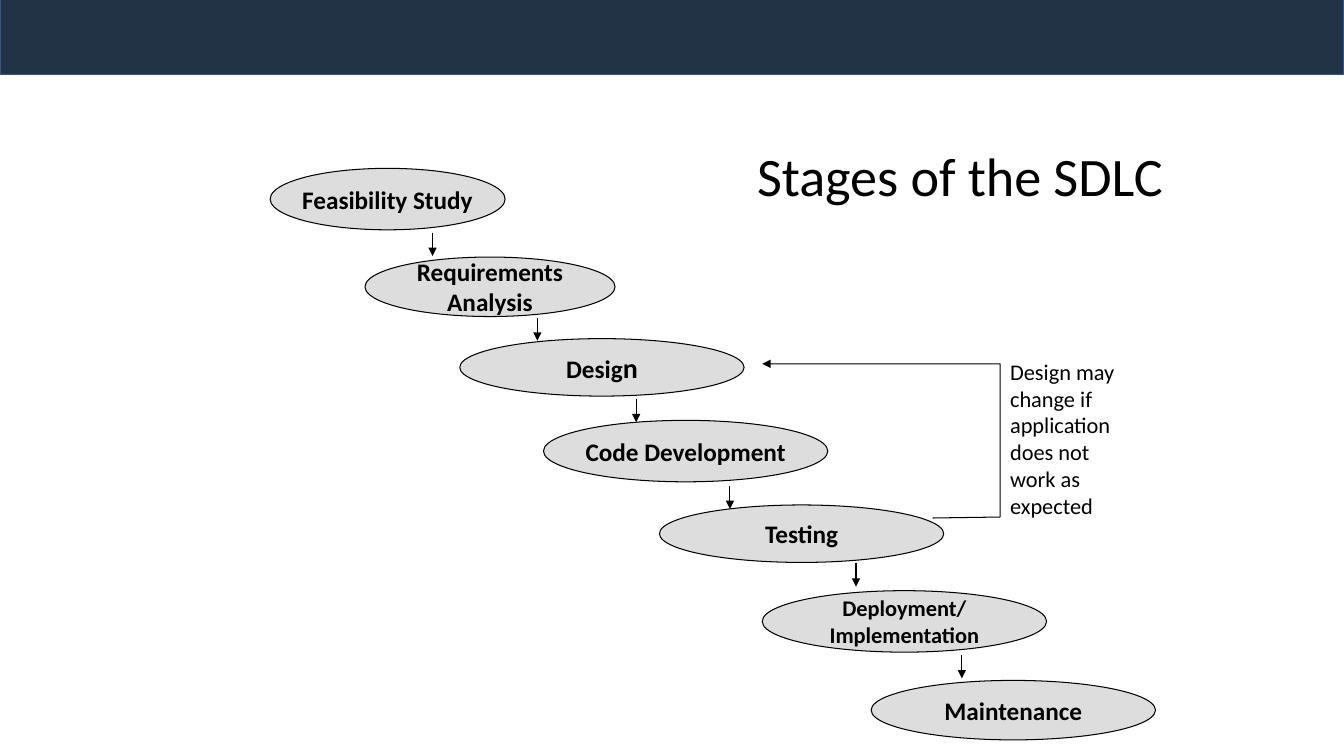
"""Build the slide that shows the stages of the SDLC as a staircase."""
from lxml.etree import SubElement
from pptx import Presentation
from pptx.dml.color import RGBColor
from pptx.enum.shapes import MSO_CONNECTOR, MSO_SHAPE
from pptx.enum.text import MSO_ANCHOR, PP_ALIGN
from pptx.oxml.ns import qn
from pptx.util import Inches, Pt

COLORS = {"banner": "223346", "banner_edge": "325491", "stage": "DDDDDD",
          "ink": "000000"}
FONT = "Calibri"
ARROW_LENGTH = 0.23

STAGES = [
    (2.68, 1.67, 2.33, 0.61, [[("Feasibility Study", 18)]], (4.29, 2.31)),
    (3.62, 2.55, 2.48, 0.59, [[("Requirements", 18)], [("Analysis", 18)]],
     (5.33, 3.15)),
    (4.56, 3.36, 2.82, 0.57, [[("Desig", 18), ("n", 20)]], (6.31, 3.96)),
    (5.39, 4.17, 2.82, 0.61, [[("Code Development", 18)]], (7.24, 4.82)),
    (6.54, 5.01, 2.82, 0.57, [[("Testing", 18)]], (8.49, 5.59)),
    (7.56, 5.86, 2.82, 0.61, [[("Deployment/", 16)], [("Implementation", 16)]],
     (9.54, 6.5)),
    (8.64, 6.75, 2.82, 0.59, [[("Maintenance", 18)]], None),
]


def color(name):
    """Return the named colour."""
    return RGBColor.from_string(COLORS[name])


def write(holder, paragraphs, bold=False, align=PP_ALIGN.LEFT,
          anchor=MSO_ANCHOR.TOP, wrap=True, spacing=None):
    """Fill a shape with paragraphs of (text, size) runs."""
    frame = holder.text_frame
    frame.word_wrap = wrap
    frame.vertical_anchor = anchor
    for index, runs in enumerate(paragraphs):
        paragraph = frame.add_paragraph() if index else frame.paragraphs[0]
        paragraph.alignment = align
        paragraph.line_spacing = spacing
        for text, size in runs:
            run = paragraph.add_run()
            run.text = text
            run.font.name = FONT
            run.font.size = Pt(size)
            run.font.bold = bold
            run.font.color.rgb = color("ink")


def outline(part, name="ink", width=0.75):
    """Give a shape or connector a solid line."""
    part.line.color.rgb = color(name)
    part.line.width = Pt(width)


def point_at_end(part):
    """Put a triangular arrowhead at the end of a line."""
    SubElement(part.line._get_or_add_ln(), qn("a:tailEnd"), type="triangle")


def add_filled(slide, kind, left, top, width, height, fill):
    """Add a flat preset shape with a solid fill."""
    part = slide.shapes.add_shape(kind, Inches(left), Inches(top),
                                  Inches(width), Inches(height))
    part.shadow.inherit = False
    part.fill.solid()
    part.fill.fore_color.rgb = color(fill)
    return part


def add_banner(slide):
    """Add the dark band along the top edge."""
    banner = add_filled(slide, MSO_SHAPE.RECTANGLE, 0, -0.04, 13.33, 0.78,
                        "banner")
    outline(banner, "banner_edge", 1)


def add_label(slide, left, top, width, height, text, size, **style):
    """Add a text box with one paragraph."""
    label = slide.shapes.add_textbox(Inches(left), Inches(top),
                                     Inches(width), Inches(height))
    write(label, [[(text, size)]], **style)


def add_stage(slide, left, top, width, height, paragraphs):
    """Add one stage ellipse."""
    stage = add_filled(slide, MSO_SHAPE.OVAL, left, top, width, height, "stage")
    outline(stage)
    write(stage, paragraphs, bold=True, align=PP_ALIGN.CENTER,
          anchor=MSO_ANCHOR.MIDDLE, wrap=False)


def add_down_arrow(slide, x, y):
    """Add the short arrow that leads to the next stage."""
    arrow = slide.shapes.add_connector(
        MSO_CONNECTOR.STRAIGHT, Inches(x), Inches(y),
        Inches(x), Inches(y + ARROW_LENGTH))
    outline(arrow)
    point_at_end(arrow)
    SubElement(arrow._element.spPr, qn("a:effectLst"))


def add_feedback(slide, *corners):
    """Add the angled arrow that leads from testing back to design."""
    start, *bends = [(Inches(x), Inches(y)) for x, y in corners]
    builder = slide.shapes.build_freeform(*start)
    builder.add_line_segments(bends, close=False)
    feedback = builder.convert_to_shape()
    feedback.shadow.inherit = False
    feedback.fill.background()
    outline(feedback)
    point_at_end(feedback)


def main():
    """Build and save the slide."""
    deck = Presentation()
    deck.slide_width, deck.slide_height = Inches(13.33), Inches(7.5)
    slide = deck.slides.add_slide(deck.slide_layouts[6])
    add_banner(slide)
    add_label(slide, 7.41, 1.69, 5.01, 0.18, "Stages of the SDLC", 38.7,
              anchor=MSO_ANCHOR.MIDDLE, spacing=0.9)
    add_feedback(slide, (9.25, 5.14), (9.92, 5.13), (9.92, 3.61), (7.56, 3.61))
    add_label(slide, 9.92, 3.5, 1.47, 1.72,
              "Design may change if application does not work as expected", 16)
    for *place, paragraphs, arrow_start in STAGES:
        add_stage(slide, *place, paragraphs)
        if arrow_start:
            add_down_arrow(slide, *arrow_start)
    deck.save("out.pptx")


if __name__ == "__main__":
    main()
